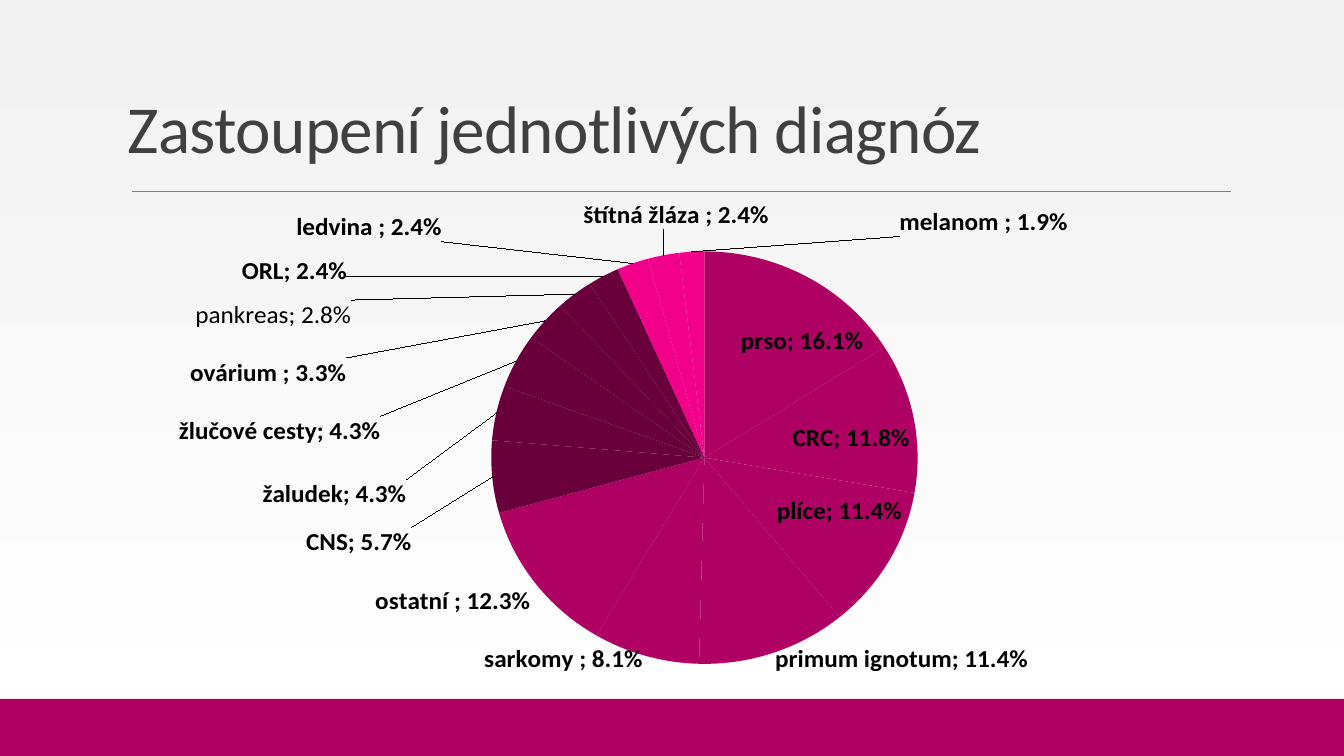
import math
from lxml import etree
from pptx import Presentation
from pptx import util as u
from pptx.chart import data as chart_data
from pptx.dml import color
from pptx.enum import chart as chart_enum, shapes, text
from pptx.oxml import ns, parse_xml

SCALE = 914400 / 100.8
WIDTH, HEIGHT = 1344, 756
MAGENTA, PLUM, PINK = "AF0063", "69003B", "F20089"
PIE_CENTER, PIE_RADII = (708, 456), (220, 213)
LABEL_HEIGHT = 31

# category, value, fill, label left, label middle, label width
DIAGNOSES = [
    ("prso", 0.161, MAGENTA, 745, 340, 121),
    ("CRC", 0.118, MAGENTA, 797, 437, 116),
    ("plíce", 0.114, MAGENTA, 781, 508, 124),
    ("primum ignotum", 0.114, MAGENTA, 779, 660, 252),
    ("sarkomy ", 0.081, MAGENTA, 489, 660, 157),
    ("ostatní ", 0.123, MAGENTA, 378, 601, 155),
    ("CNS", 0.057, PLUM, 309, 543, 105),
    ("žaludek", 0.043, PLUM, 266, 495, 143),
    ("žlučové cesty", 0.043, PLUM, 182, 431, 201),
    ("ovárium ", 0.033, PLUM, 193, 372, 156),
    ("pankreas", 0.028, PLUM, 198, 313, 156),
    ("ORL", 0.024, PLUM, 245, 268, 105),
    ("ledvina ", 0.024, PINK, 300, 223, 145),
    ("štítná žláza ", 0.024, PINK, 588, 211, 184),
    ("melanom ", 0.019, PINK, 903, 218, 168),
]


def px(length):
    """Turn pixels into EMU."""
    return u.Emu(round(length * SCALE))


def rgb(value):
    """Turn a hex string into a colour."""
    return color.RGBColor.from_string(value)


def chart_xml(tag, content="", **attributes):
    """Build one chart element."""
    listed = "".join(f' {name}="{value}"' for name, value in attributes.items())
    return parse_xml(f'<c:{tag} {ns.nsdecls("c")}{listed}>{content}</c:{tag}>')


def manual_layout(**settings):
    """Build a manual layout element."""
    inner = "".join(f'<c:{name} val="{value}"/>' for name, value in settings.items())
    return chart_xml("layout", f"<c:manualLayout>{inner}</c:manualLayout>")


def add_background(slide):
    """Fill the slide with a vertical gradient."""
    fill = slide.background.fill
    fill.gradient()
    fill.gradient_angle = 270
    for stop, position, shade in zip(fill.gradient_stops, (0, 1), ("F2F2F2", "FFFFFF")):
        stop.position = position
        stop.color.rgb = rgb(shade)


def add_footer(slide, left, top, width, height):
    """Draw the bottom band with its thin upper strip."""
    strip = 7
    for band_top, band_height in ((top + strip, height - strip), (top, strip)):
        band = slide.shapes.add_shape(shapes.MSO_SHAPE.RECTANGLE, px(left), px(band_top),
                                      px(width), px(band_height))
        band.shadow.inherit = False
        band.fill.solid()
        band.fill.fore_color.rgb = rgb(MAGENTA)
        band.line.fill.background()


def add_title(slide, left, top, width, height):
    """Place the title and the rule under it."""
    frame = slide.shapes.add_textbox(px(left), px(top), px(width), px(height)).text_frame
    frame.word_wrap = True
    frame.vertical_anchor = text.MSO_ANCHOR.BOTTOM
    frame.text = "Zastoupení jednotlivých diagnóz"
    paragraph = frame.paragraphs[0]
    paragraph.line_spacing = 0.85
    font = paragraph.runs[0].font
    font.name, font.size = "Calibri", u.Pt(48)
    font.color.rgb = rgb("404040")
    font._element.set("spc", "-50")

    rule_top = px(top + height + 19)
    rule = slide.shapes.add_connector(shapes.MSO_CONNECTOR.STRAIGHT, px(left + 14), rule_top,
                                      px(left + width + 4), rule_top)
    rule.line.color.rgb = rgb("808080")
    rule.line.width = u.Pt(0.5)
    etree.SubElement(rule._element.spPr, ns.qn("a:effectLst"))


def default_corner(middle, label_width):
    """Give the top left corner of an outside label at a share of the turn."""
    angle = (90 - 360 * middle) % 360
    across, up = math.cos(math.radians(angle)), math.sin(math.radians(angle))
    left = PIE_CENTER[0] + PIE_RADII[0] * across
    top = PIE_CENTER[1] - PIE_RADII[1] * up
    side, rise = math.sin(math.radians(5)), math.sin(math.radians(5))
    left -= label_width * (0.5 if abs(across) <= side else across < 0)
    top -= LABEL_HEIGHT * (0.5 if abs(up) <= rise else up > 0)
    return left, top


def style_labels(labels, bold):
    """Set the shared look of data labels."""
    labels.position = chart_enum.XL_LABEL_POSITION.BEST_FIT
    labels.font.name, labels.font.size = "Calibri", u.Pt(18)
    labels.font.bold = bold
    labels.font.color.rgb = rgb("000000")


def add_separator(element):
    """Part category and value with a semicolon."""
    element.find(ns.qn("c:showBubbleSize")).addnext(chart_xml("separator", "; "))


def add_pie(slide, left, top, width, height):
    """Add the pie of diagnoses with its placed labels."""
    data = chart_data.CategoryChartData(number_format="0.0%")
    data.categories = [diagnosis[0] for diagnosis in DIAGNOSES]
    data.add_series("Series 1", [diagnosis[1] for diagnosis in DIAGNOSES])
    chart = slide.shapes.add_chart(chart_enum.XL_CHART_TYPE.PIE, px(left), px(top),
                                   px(width), px(height), data).chart
    chart.has_title = chart.has_legend = False
    chart.font.name, chart.font.size = "Calibri", u.Pt(10)
    chart.font.color.rgb = rgb("000000")
    plot = chart.plots[0]
    plot.vary_by_categories = True
    area = plot._element.getparent()
    for layout in area.findall(ns.qn("c:layout")):
        area.remove(layout)
    area.insert(0, manual_layout(layoutTarget="inner", xMode="edge", yMode="edge",
                                 x=0.09, y=0.16, w=0.85, h=0.82))

    series = plot.series[0]
    labels = series.data_labels
    labels.show_category_name = labels.show_value = True
    labels.show_percentage = False
    labels.number_format, labels.number_format_is_linked = "0.0%", False
    style_labels(labels, True)
    add_separator(labels._element)

    total, passed = sum(diagnosis[1] for diagnosis in DIAGNOSES), 0
    for index, (name, value, fill, label_left, label_middle, label_width) in enumerate(DIAGNOSES):
        point = series.points[index]
        point.format.fill.solid()
        point.format.fill.fore_color.rgb = rgb(fill)
        point.format.line.fill.background()
        style_labels(point.data_label, name != "pankreas")
        start_left, start_top = default_corner((passed + value / 2) / total, label_width)
        passed += value
        label = labels._element.findall(ns.qn("c:dLbl"))[-1]
        label.find(ns.qn("c:showCatName")).set("val", "1")
        identifier = label.find(ns.qn("c:idx"))
        identifier.addnext(chart_xml("numFmt", formatCode="0.0%", sourceLinked="0"))
        identifier.addnext(manual_layout(
            x=round((label_left - start_left) / width, 4),
            y=round((label_middle - LABEL_HEIGHT / 2 - start_top) / height, 4)))
        add_separator(label)


def main():
    """Build and save the slide."""
    presentation = Presentation()
    presentation.slide_width, presentation.slide_height = px(WIDTH), px(HEIGHT)
    slide = presentation.slides.add_slide(presentation.slide_layouts[6])
    add_background(slide)
    add_footer(slide, 0, 699, WIDTH, 57)
    add_title(slide, 118, 36, 1109, 136)
    add_pie(slide, 53, 171, 1265, 520)
    presentation.save("out.pptx")


if __name__ == "__main__":
    main()
